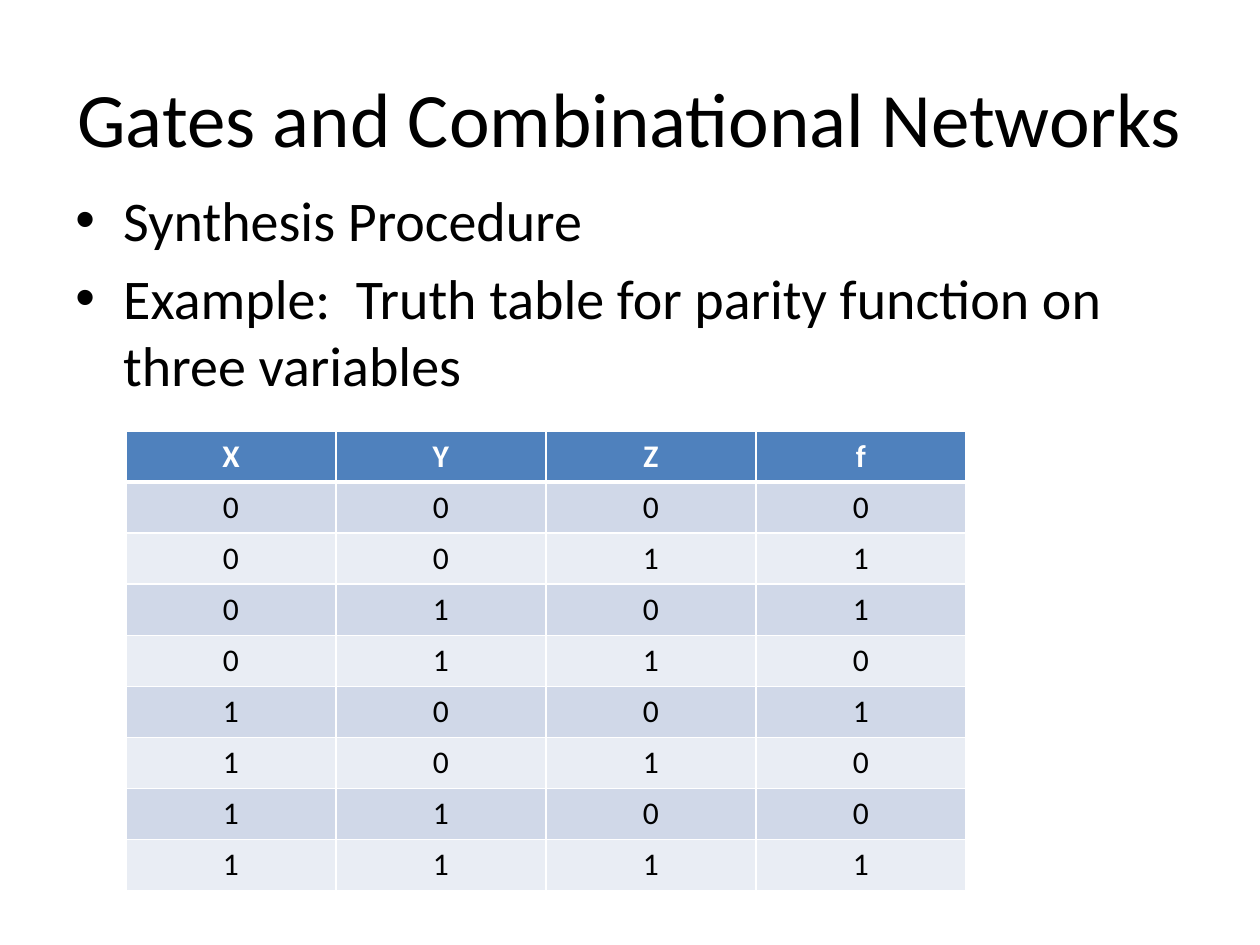
import dataclasses
import itertools

import pptx
import pptx.dml.color
import pptx.enum.text
import pptx.oxml
import pptx.oxml.ns
import pptx.presentation
import pptx.slide
import pptx.table
import pptx.text.text
import pptx.util

BLACK = pptx.dml.color.RGBColor(0x00, 0x00, 0x00)
WHITE = pptx.dml.color.RGBColor(0xFF, 0xFF, 0xFF)
HEADER_BLUE = pptx.dml.color.RGBColor(0x4F, 0x81, 0xBD)
BAND_COLORS = (
    pptx.dml.color.RGBColor(0xD0, 0xD8, 0xE8),
    pptx.dml.color.RGBColor(0xE9, 0xED, 0xF4),
)
FONT = "Calibri"
SLIDE_WIDTH = pptx.util.Inches(10)
SLIDE_HEIGHT = pptx.util.Inches(7.5)
GRID_COLUMNS = 20
GRID_ROWS = 15
ALIGN = pptx.enum.text.PP_ALIGN
ANCHOR = pptx.enum.text.MSO_ANCHOR


@dataclasses.dataclass(frozen=True)
class Area:
    column: float
    row: float
    columns: float
    rows: float

    def box(self) -> tuple[int, int, int, int]:
        return (
            round(self.column * SLIDE_WIDTH / GRID_COLUMNS),
            round(self.row * SLIDE_HEIGHT / GRID_ROWS),
            round(self.columns * SLIDE_WIDTH / GRID_COLUMNS),
            round(self.rows * SLIDE_HEIGHT / GRID_ROWS),
        )


@dataclasses.dataclass(frozen=True)
class TableRow:
    values: tuple[str, ...]
    fill: pptx.dml.color.RGBColor
    color: pptx.dml.color.RGBColor = BLACK
    bold: bool = False
    top_border: float = 1
    bottom_border: float = 1


TITLE_AREA = Area(1, 0.6, 18, 2.5)
BODY_AREA = Area(1, 2.84, 18, 9.9)
TABLE_AREA = Area(2, 6.84, 13.33, 7.3)
TITLE = "Gates and Combinational Networks"
BULLETS = (
    "Synthesis Procedure",
    "Example:  Truth table for parity function on three variables",
)


def write_text(
    frame: pptx.text.text.TextFrame,
    *texts: str,
    size: float,
    color: pptx.dml.color.RGBColor = BLACK,
    bold: bool = False,
    alignment: ALIGN = ALIGN.CENTER,
    bulleted: bool = False,
) -> None:
    for index, text in enumerate(texts):
        paragraph = frame.paragraphs[0] if index == 0 else frame.add_paragraph()
        paragraph.alignment = alignment
        run = paragraph.add_run()
        run.text = text
        run.font.name = FONT
        run.font.size = pptx.util.Pt(size)
        run.font.bold = bold
        run.font.color.rgb = color
        if bulleted:
            paragraph.space_before = pptx.util.Pt(0.2 * size)
            add_bullet(paragraph)


def add_bullet(paragraph: pptx.text.text._Paragraph) -> None:
    indent = pptx.util.Inches(0.38)
    properties = paragraph._p.get_or_add_pPr()
    properties.set("marL", str(indent))
    properties.set("indent", str(-indent))
    namespace = pptx.oxml.ns.nsdecls("a")
    properties.append(pptx.oxml.parse_xml(f'<a:buFont {namespace} typeface="Arial"/>'))
    properties.append(pptx.oxml.parse_xml(f'<a:buChar {namespace} char="•"/>'))


def add_text_box(
    slide: pptx.slide.Slide, area: Area, anchor: ANCHOR
) -> pptx.text.text.TextFrame:
    frame = slide.shapes.add_textbox(*area.box()).text_frame
    frame.word_wrap = True
    frame.vertical_anchor = anchor
    return frame


def add_borders(cell: pptx.table._Cell, row: TableRow) -> None:
    widths = {"L": 1, "R": 1, "T": row.top_border, "B": row.bottom_border}
    properties = cell._tc.get_or_add_tcPr()
    for side, width in widths.items():
        properties.append(
            pptx.oxml.parse_xml(
                f'<a:ln{side} {pptx.oxml.ns.nsdecls("a")} w="{pptx.util.Pt(width)}">'
                f'<a:solidFill><a:srgbClr val="{WHITE}"/></a:solidFill></a:ln{side}>'
            )
        )


def truth_rows() -> list[TableRow]:
    rows = [TableRow(("X", "Y", "Z", "f"), HEADER_BLUE, WHITE, True, bottom_border=3)]
    for index, inputs in enumerate(itertools.product((0, 1), repeat=3)):
        values = tuple(str(value) for value in (*inputs, sum(inputs) % 2))
        top_border = 3 if index == 0 else 1
        rows.append(TableRow(values, BAND_COLORS[index % 2], top_border=top_border))
    return rows


def add_truth_table(
    slide: pptx.slide.Slide, area: Area, rows: list[TableRow]
) -> None:
    shape = slide.shapes.add_table(len(rows), len(rows[0].values), *area.box())
    table = shape.table
    table.first_row = False
    table.horz_banding = False
    for row_index, row in enumerate(rows):
        for column_index, value in enumerate(row.values):
            cell = table.cell(row_index, column_index)
            add_borders(cell, row)
            cell.fill.solid()
            cell.fill.fore_color.rgb = row.fill
            write_text(
                cell.text_frame, value, size=18, color=row.color, bold=row.bold
            )


def build_presentation() -> pptx.presentation.Presentation:
    presentation = pptx.Presentation()
    presentation.slide_width = SLIDE_WIDTH
    presentation.slide_height = SLIDE_HEIGHT
    slide = presentation.slides.add_slide(presentation.slide_layouts[6])
    title = add_text_box(slide, TITLE_AREA, ANCHOR.MIDDLE)
    write_text(title, TITLE, size=44)
    body = add_text_box(slide, BODY_AREA, ANCHOR.TOP)
    write_text(body, *BULLETS, size=32, alignment=ALIGN.LEFT, bulleted=True)
    add_truth_table(slide, TABLE_AREA, truth_rows())
    return presentation


if __name__ == "__main__":
    build_presentation().save("out.pptx")
